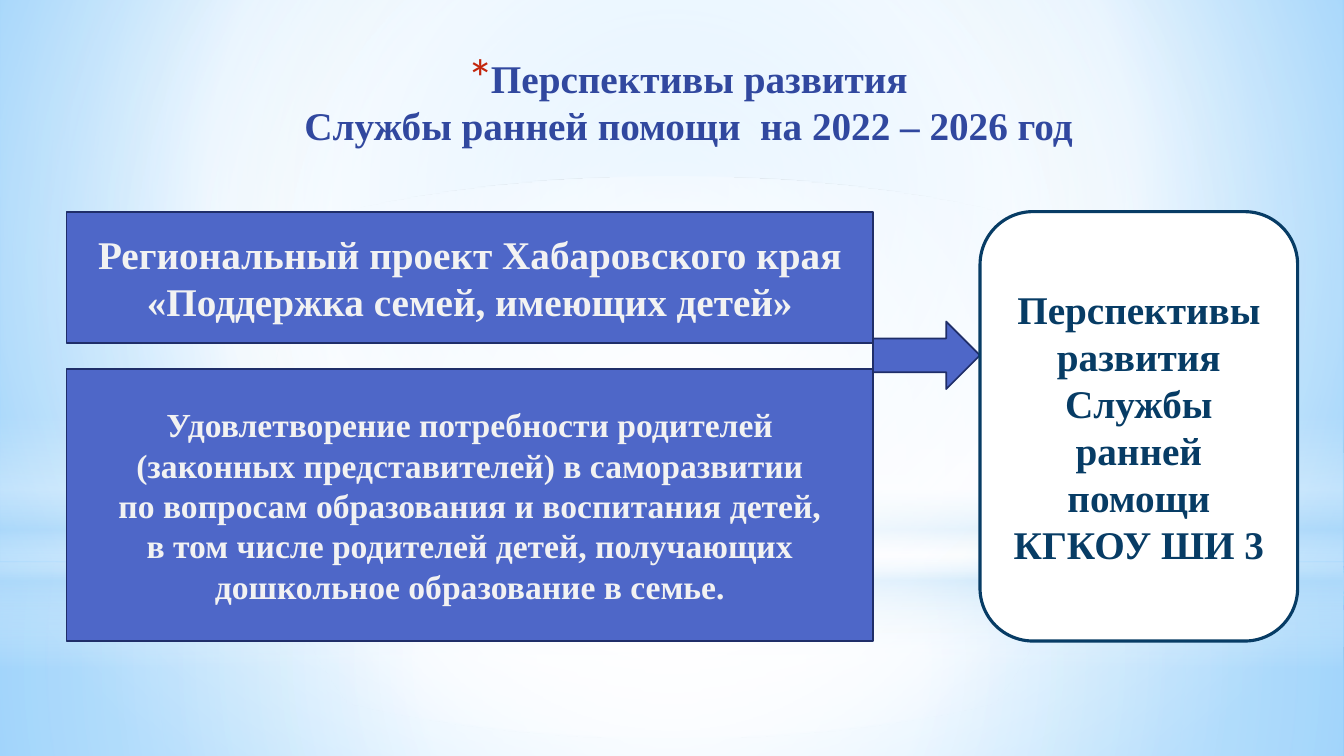
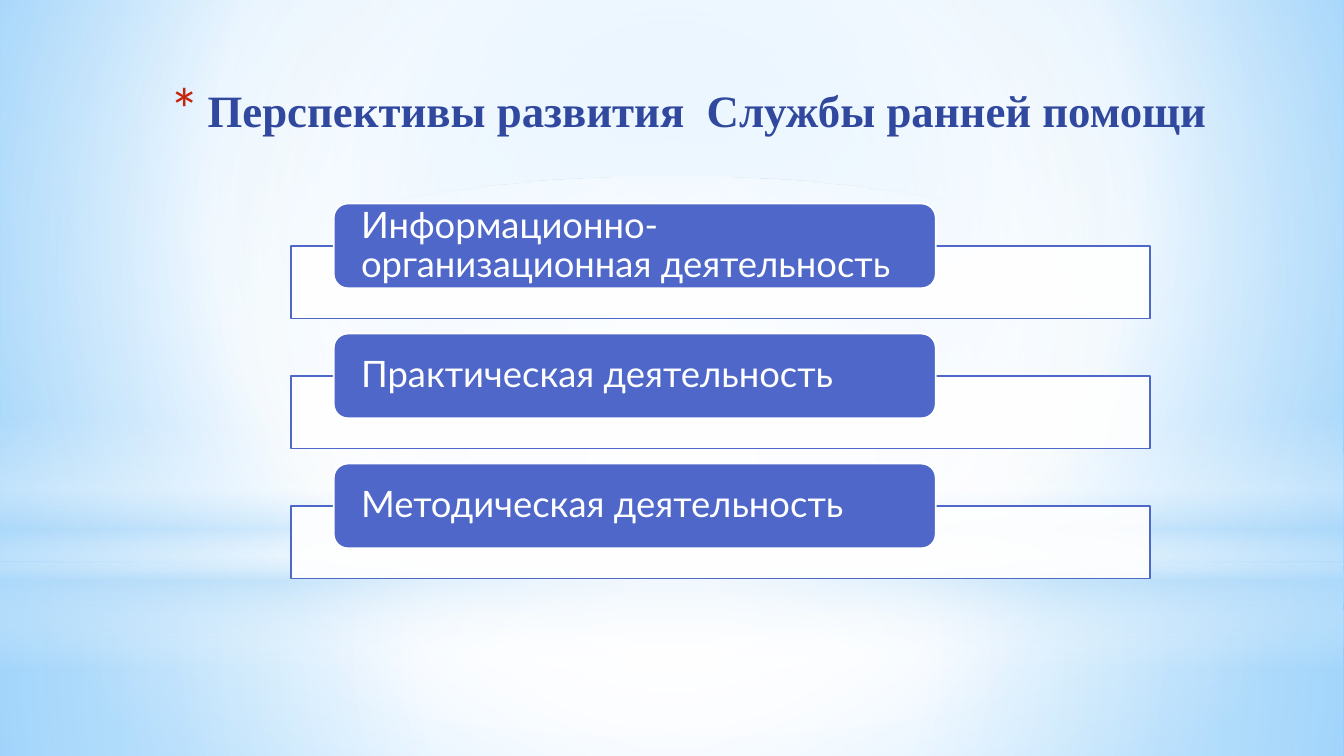
from lxml import etree
from pptx import Presentation
from pptx.dml.color import RGBColor as RGB
from pptx.enum.shapes import MSO_SHAPE as SHAPE
from pptx.enum.text import MSO_ANCHOR as ANCHOR, PP_ALIGN as ALIGN
from pptx.oxml import parse_xml
from pptx.oxml.ns import nsdecls, qn
from pptx.util import Inches, Pt

W, H = Inches(13.33), Inches(7.5)
SERIF, SANS = "Times New Roman", "Lato"
C = {
    "white": "FFFFFF", "sky": "B4DCFA", "light_blue": "9ED5FF",
    "deep_sky": "5BB9FF", "title": "31489F", "star": "C3260C",
    "blue": "4E67C8", "edge": "1F2E69", "pale": "F2F2F2", "navy": "073C65",
}
CENTRE = '<a:path path="circle"><a:fillToRect l="50000" t="50000" r="50000" b="50000"/></a:path>'
UPPER = '<a:path path="circle"><a:fillToRect l="20000" t="10000" r="20000" b="60000"/></a:path>'
DOWN = '<a:lin ang="5400000" scaled="0"/>'
HALO = [(0, "white", 91), (37, "white", 76), (100, "sky", 79)]
GLOW = [(0, "white", 89), (48, "white", 62), (100, "sky", 79)]
HORIZON = [(0, "white", 0), (29, "white", 30), (45, "sky", 40),
           (55, "white", 26), (65, "sky", 60), (100, "white", 0)]
SPOT = [(0, "white", 100), (56, "white", 0)]
BASE = [(0, "light_blue", 100), (60, "white", 100), (100, "deep_sky", 100)]


def place(left, top, width, height):
    return (int(W * left / 100), int(H * top / 100),
            int(W * width / 100), int(H * height / 100))


def set_gradient(props, stops, direction):
    gs = "".join(
        f'<a:gs pos="{pos * 1000}"><a:srgbClr val="{C[color]}">'
        f'<a:alpha val="{alpha * 1000}"/></a:srgbClr></a:gs>'
        for pos, color, alpha in stops)
    grad = parse_xml(f'<a:gradFill {nsdecls("a")} rotWithShape="1">'
                     f'<a:gsLst>{gs}</a:gsLst>{direction}</a:gradFill>')
    props.replace(props.find(qn("a:solidFill")), grad)


def add_box(slide, kind, box, fill, line=None, weight=1.25, alpha=None):
    sp = slide.shapes.add_shape(kind, *place(*box))
    sp.shadow.inherit = False
    sp.fill.solid()
    sp.fill.fore_color.rgb = RGB.from_string(C[fill])
    if alpha is not None:
        color = sp.element.spPr.find(qn("a:solidFill"))[0]
        etree.SubElement(color, qn("a:alpha"), val=str(alpha * 1000))
    if line:
        sp.line.color.rgb = RGB.from_string(C[line])
        sp.line.width = Pt(weight)
    else:
        sp.line.fill.background()
    return sp


def put_text(sp, text, *, size, color, font=SERIF, bold=True, align=ALIGN.CENTER,
             anchor=ANCHOR.MIDDLE, spacing=None, insets=(0.1, 0.05)):
    tf = sp.text_frame
    tf.word_wrap = True
    tf.vertical_anchor = anchor
    tf.margin_left = tf.margin_right = Inches(insets[0])
    tf.margin_top = tf.margin_bottom = Inches(insets[1])
    tf.text = text
    for p in tf.paragraphs:
        p.alignment = align
        p.line_spacing = spacing
        for r in p.runs:
            r.font.name, r.font.size, r.font.bold = font, Pt(size), bold
            r.font.color.rgb = RGB.from_string(C[color])


def add_title(slide, text, box, size, indent=0):
    sp = slide.shapes.add_textbox(*place(*box))
    put_text(sp, text, size=size, color="title", anchor=ANCHOR.TOP)
    pPr = sp.text_frame.paragraphs[0]._p.get_or_add_pPr()
    pPr.set("marL", str(Inches(indent)))
    pPr.set("indent", str(-Inches(indent)))
    color = etree.SubElement(pPr, qn("a:buClr"))
    etree.SubElement(color, qn("a:srgbClr"), val=C["star"])
    etree.SubElement(pPr, qn("a:buSzPct"), val="128000")
    etree.SubElement(pPr, qn("a:buFont"), typeface=SANS)
    etree.SubElement(pPr, qn("a:buChar"), char="*")


def set_background(master):
    master.background.fill.solid()
    set_gradient(master.element.find(".//" + qn("p:bgPr")), BASE, UPPER)


def add_slide(prs):
    slide = prs.slides.add_slide(prs.slide_layouts[6])
    for kind, top, height, stops, direction in (
            (SHAPE.RECTANGLE, 74.4, 25.6, HALO, CENTRE),
            (SHAPE.RECTANGLE, 0, 74.4, GLOW, CENTRE),
            (SHAPE.RECTANGLE, 54.93, 33.33, HORIZON, DOWN),
            (SHAPE.OVAL, 23.33, 74.4, SPOT, CENTRE)):
        sp = add_box(slide, kind, (0, top, 100, height), "white")
        set_gradient(sp.element.spPr, stops, direction)
    return slide


def add_prospects(prs):
    slide = add_slide(prs)
    add_title(slide, "Перспективы развития\vСлужбы ранней помощи  на 2022 – 2026 год",
              (7.5, 6.53, 87.47, 15.87), 28)
    left, top, width, height = 4.95, 28, 60, 56.8
    right, goal_left = left + width, 72.92
    grounds = (
        (top, 17.33, 28,
         "Региональный проект Хабаровского края «Поддержка семей, имеющих детей»"),
        (48.8, 36, 24,
         "Удовлетворение потребности родителей\n"
         "(законных представителей) в саморазвитии\n"
         "по вопросам образования и воспитания детей,\n"
         "в том числе родителей детей, получающих дошкольное образование в семье."),
    )
    for y, h, size, text in grounds:
        sp = add_box(slide, SHAPE.RECTANGLE, (left, y, width, h), "blue", "edge")
        put_text(sp, text, size=size, color="pale")
    add_box(slide, SHAPE.RIGHT_ARROW, (right, 42.53, goal_left - right, 8.93),
            "blue", "edge")
    goal = add_box(slide, SHAPE.ROUNDED_RECTANGLE, (goal_left, top, 23.63, height),
                   "white", "navy", 2.25)
    put_text(goal, "Перспективы развития\nСлужбы ранней помощи КГКОУ ШИ 3",
             size=28, color="navy")


def add_activities(prs):
    slide = add_slide(prs)
    add_title(slide, "Перспективы развития  Службы ранней помощи",
              (8.03, 10.27, 86.57, 10.4), 32, 0.35)
    activities = ("Информационно-организационная деятельность",
                  "Практическая деятельность", "Методическая деятельность")
    for i, text in enumerate(activities):
        top = 26.93 + 17.2 * i
        add_box(slide, SHAPE.RECTANGLE, (21.68, top + 5.6, 63.92, 9.6),
                "white", "blue", alpha=90)
        label = add_box(slide, SHAPE.ROUNDED_RECTANGLE, (24.83, top, 44.79, 11.2),
                        "blue", "white")
        put_text(label, text, size=26, color="white", font=SANS, bold=False,
                 align=ALIGN.LEFT, spacing=0.9, insets=(0.23, 0))


def main():
    prs = Presentation()
    prs.slide_width, prs.slide_height = W, H
    set_background(prs.slide_master)
    add_prospects(prs)
    add_activities(prs)
    prs.save("out.pptx")


if __name__ == "__main__":
    main()
